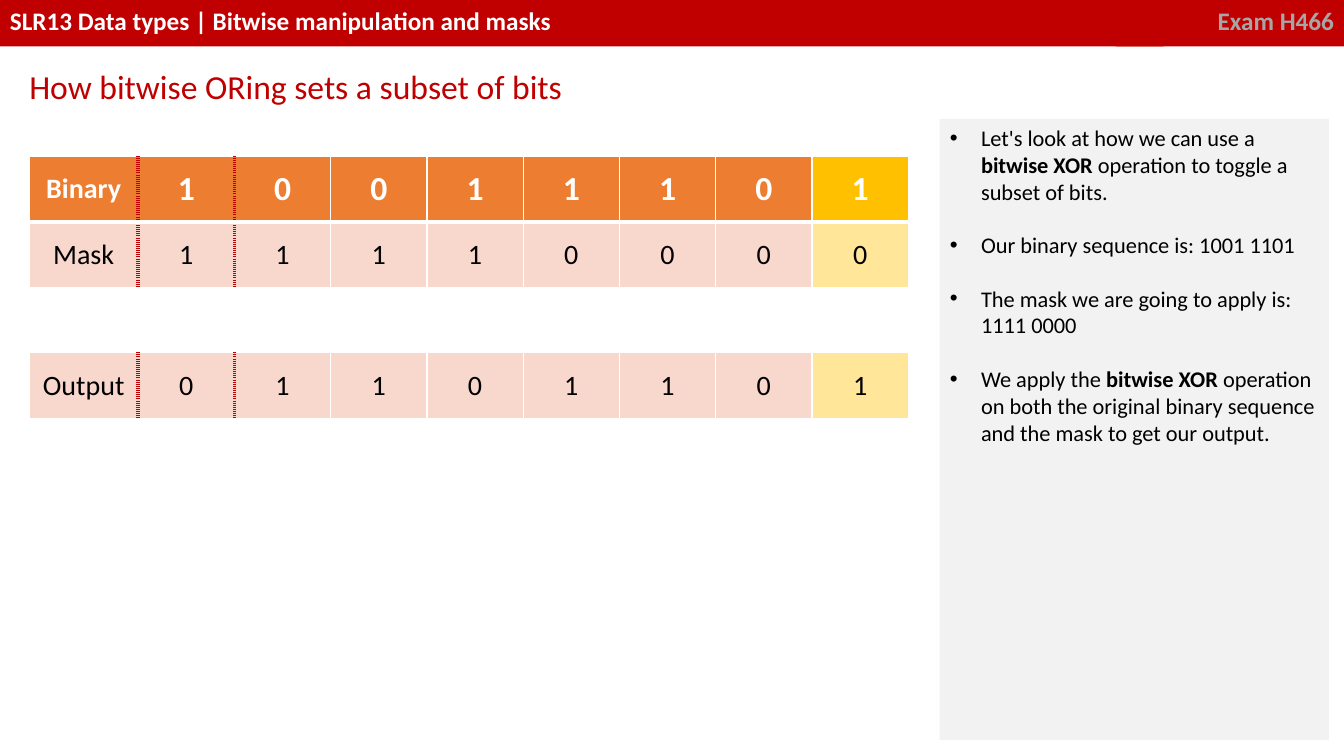
import pptx
import pptx.util
import pptx.dml.color
import pptx.enum.shapes
import pptx.enum.text
import pptx.oxml
import pptx.oxml.ns

Inches = pptx.util.Inches
Pt = pptx.util.Pt
RGB = pptx.dml.color.RGBColor.from_string
ALIGN = pptx.enum.text.PP_ALIGN
ANCHOR = pptx.enum.text.MSO_ANCHOR
NS = pptx.oxml.ns.nsdecls("a")

COLORS = {
    "red": "C00000", "white": "FFFFFF", "grey": "A6A6A6", "black": "000000",
    "panel": "F2F2F2", "orange": "ED7D31", "gold": "FFC000",
    "pink": "F8D7CD", "cream": "FFE699",
}


def add_text(p, text, size=16, color="black", bold=False, align=ALIGN.LEFT):
    p.alignment = align
    r = p.add_run()
    r.text = text
    r.font.name = "Calibri"
    r.font.size = Pt(size)
    r.font.bold = bold
    r.font.color.rgb = RGB(COLORS[color])


def add_border(cell, side, color="white", width=1, dash="solid"):
    cell._tc.get_or_add_tcPr().append(pptx.oxml.parse_xml(
        f'<a:ln{side} {NS} w="{Pt(width)}"><a:solidFill>'
        f'<a:srgbClr val="{COLORS[color]}"/></a:solidFill>'
        f'<a:prstDash val="{dash}"/></a:ln{side}>'))


prs = pptx.Presentation()
prs.slide_width, prs.slide_height = Inches(13.33), Inches(7.5)
s = prs.slides.add_slide(prs.slide_layouts[1])

# Header bar
for left, width, text, color, align in [
    (11.07, 2.26, "Exam H466", "grey", ALIGN.RIGHT),
    (0, 11.54, "SLR13 Data types | Bitwise manipulation and masks", "white", ALIGN.LEFT),
]:
    sp = s.shapes.add_shape(pptx.enum.shapes.MSO_SHAPE.RECTANGLE,
                            Inches(left), 0, Inches(width), Inches(0.46))
    sp.shadow.inherit = False
    sp.fill.solid()
    sp.fill.fore_color.rgb = RGB(COLORS["red"])
    sp.line.fill.background()
    sp.text_frame.vertical_anchor = ANCHOR.TOP
    add_text(sp.text_frame.paragraphs[0], text, size=18, color=color, bold=True, align=align)

# Title and explanation panel
title, panel = s.shapes.title, s.placeholders[1]
for sp, box in [(title, (0.19, 0.58, 7.58, 0.51)), (panel, (9.32, 1.18, 3.86, 6.16))]:
    sp.left, sp.top, sp.width, sp.height = map(Inches, box)
    sp.text_frame.auto_size = pptx.enum.text.MSO_AUTO_SIZE.NONE
    sp.text_frame.vertical_anchor = ANCHOR.TOP

p = title.text_frame.paragraphs[0]
p.line_spacing = 1.07
add_text(p, "How bitwise ORing sets a subset of bits", size=24, color="red")

panel.fill.solid()
panel.fill.fore_color.rgb = RGB(COLORS["panel"])
points = [
    ["Let's look at how we can use a ", "bitwise XOR",
     " operation to toggle a subset of bits."],
    ["Our binary sequence is: 1001 1101"],
    ["The mask we are going to apply is: 1111 0000"],
    ["We apply the ", "bitwise XOR",
     " operation on both the original binary sequence and the mask to get our output."],
]
tf = panel.text_frame
for i, parts in enumerate(points):
    p = tf.add_paragraph() if i else tf.paragraphs[0]
    pPr = p._p.get_or_add_pPr()
    pPr.set("marL", str(Inches(0.31)))
    pPr.set("indent", str(Inches(-0.31)))
    pPr.append(pptx.oxml.parse_xml(f'<a:buFont {NS} typeface="Arial"/>'))
    pPr.append(pptx.oxml.parse_xml(f'<a:buChar {NS} char="•"/>'))
    p.space_before = Pt(19 if i else 0)
    for j, part in enumerate(parts):
        add_text(p, part, bold=j == 1)

# Bit table: the blank row separates the operands from the output
rows = [["Binary", *"10011101"], ["Mask", *"11110000"], [""] * 9, ["Output", *"01101101"]]
table = s.shapes.add_table(4, 9, Inches(0.29), Inches(1.55), Inches(8.72), Inches(2.6)).table
table.horz_banding = False
for c, column in enumerate(table.columns):
    column.width = Inches((8.72 - 1.08) / 8 if c else 1.08)
for r, values in enumerate(rows):
    table.rows[r].height = Inches(0.65)
    header, blank = r == 0, r == 2
    for c, value in enumerate(values):
        cell = table.cell(r, c)
        cell.vertical_anchor = ANCHOR.MIDDLE
        dotted = {"color": "red", "width": 3, "dash": "sysDot"}
        add_border(cell, "L", **(dotted if c in (1, 2) and not blank else {}))
        add_border(cell, "R", **(dotted if c in (0, 1) and not blank else {}))
        add_border(cell, "T", width=3 if r == 1 else 1)
        add_border(cell, "B", width=3 if header else 1)
        last = c == 8
        if blank:
            fill = "white"
        elif header:
            fill = "gold" if last else "orange"
        else:
            fill = "cream" if last else "pink"
        cell.fill.solid()
        cell.fill.fore_color.rgb = RGB(COLORS[fill])
        if value:
            add_text(cell.text_frame.paragraphs[0], value, size=24 if header and c else 20,
                     color="white" if header else "black", bold=header, align=ALIGN.CENTER)

prs.save("out.pptx")
